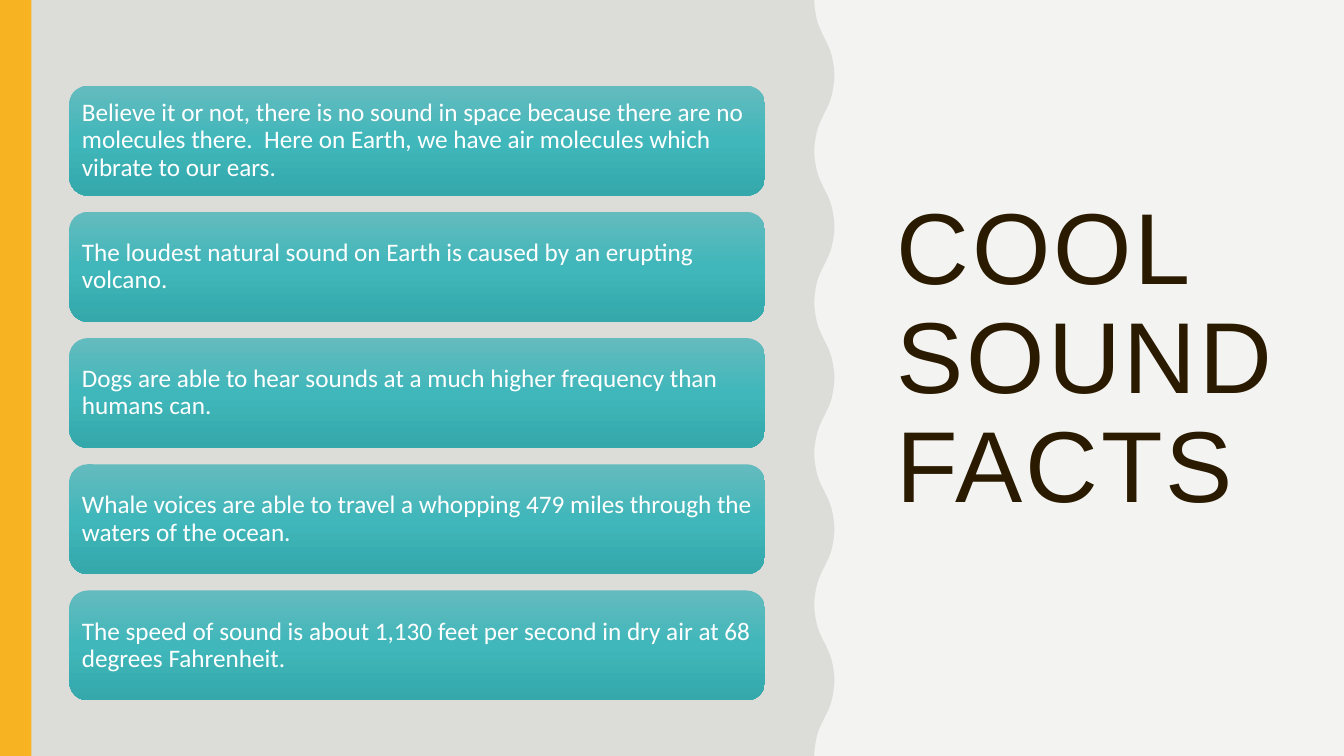
from copy import deepcopy

from pptx import Presentation
from pptx.dml.color import RGBColor
from pptx.enum.shapes import MSO_SHAPE as Shape
from pptx.enum.text import MSO_ANCHOR as Anchor, MSO_AUTO_SIZE as AutoSize, PP_ALIGN as Align
from pptx.oxml.ns import qn
from pptx.util import Cm, Pt

# Content
TITLE = "COOL SOUND FACTS"
FACTS = [
    "Believe it or not, there is no sound in space because there are no molecules there.  "
    "Here on Earth, we have air molecules which vibrate to our ears.",
    "The loudest natural sound on Earth is caused by an erupting volcano.",
    "Dogs are able to hear sounds at a much higher frequency than humans can.",
    "Whale voices are able to travel a whopping 479 miles through the waters of the ocean.",
    "The speed of sound is about 1,130 feet per second in dry air at 68 degrees Fahrenheit.",
]

# Colours
PAPER, PANEL, AMBER, BROWN, WHITE = "F3F3F2", "DCDCD9", "F8B323", "2A1A00", "FFFFFF"
CARD_STOPS = [(0, "64BBBE"), (0.5, "40B7BB"), (1, "34A8AB")]

# Measures in centimetres
PAGE_WIDTH, PAGE_HEIGHT = 33.87, 19.05
BAR_WIDTH = 0.79
WAVE_LEFT, WAVE_DEPTH, WAVE_COUNT = 20.52, 0.51, 5
CARD_LEFT, CARD_TOP, CARD_WIDTH, CARD_HEIGHT, CARD_GAP = 1.75, 2.16, 17.53, 2.77, 0.41

# First half of one wave: (share of half a wave down, share of the depth across)
WAVE_RISE = [(0, 0), (0.09, 0.02), (0.18, 0.07), (0.26, 0.13), (0.33, 0.21), (0.39, 0.3),
             (0.5, 0.5), (0.61, 0.7), (0.67, 0.79), (0.74, 0.87), (0.82, 0.93), (0.91, 0.98)]


def colour(code):
    return RGBColor.from_string(code)


def paint(shape, code):
    shape.shadow.inherit = False
    shape.line.fill.background()
    shape.fill.solid()
    shape.fill.fore_color.rgb = colour(code)


def paint_gradient(shape, stops):
    shape.shadow.inherit = False
    shape.line.fill.background()
    shape.fill.gradient()
    shape.fill.gradient_angle = 270
    stop_list = shape._element.spPr.find(qn("a:gradFill")).find(qn("a:gsLst"))
    while len(stop_list) < len(stops):
        stop_list.append(deepcopy(stop_list[0]))
    for stop, (position, code) in zip(shape.fill.gradient_stops, stops):
        stop.position = position
        stop.color.rgb = colour(code)


def write(frame, text, font, size, code):
    frame.word_wrap = True
    frame.auto_size = AutoSize.NONE
    frame.vertical_anchor = Anchor.MIDDLE
    para = frame.paragraphs[0]
    para.alignment = Align.LEFT
    para.line_spacing = 0.9
    span = para.add_run()
    span.text = text
    span.font.name = font
    span.font.size = Pt(size)
    span.font.color.rgb = colour(code)
    return span


def wave_points():
    half = PAGE_HEIGHT / WAVE_COUNT / 2
    for index in range(WAVE_COUNT * 2):
        for down, across in WAVE_RISE:
            depth = across if index % 2 == 0 else 1 - across
            yield Cm(WAVE_LEFT + depth * WAVE_DEPTH), Cm((index + down) * half)
    yield Cm(WAVE_LEFT), Cm(PAGE_HEIGHT)


# Page
deck = Presentation()
deck.slide_width, deck.slide_height = Cm(PAGE_WIDTH), Cm(PAGE_HEIGHT)
page = deck.slides.add_slide(deck.slide_layouts[5])
page.background.fill.solid()
page.background.fill.fore_color.rgb = colour(PAPER)

# Panel with the wavy edge
outline = page.shapes.build_freeform(0, 0)
outline.add_line_segments([*wave_points(), (0, Cm(PAGE_HEIGHT))], close=True)
paint(outline.convert_to_shape(), PANEL)

# Bar on the left
bar = page.shapes.add_shape(Shape.RECTANGLE, 0, 0, Cm(BAR_WIDTH), Cm(PAGE_HEIGHT))
paint(bar, AMBER)

# Title
title = page.shapes.title
title.left, title.top, title.width, title.height = Cm(22.35), Cm(1.35), Cm(10.16), Cm(15.47)
heading = write(title.text_frame, TITLE, "Arial", 72, BROWN)
heading.font._element.set("spc", "200")

# Fact cards
for row, fact in enumerate(FACTS):
    top = CARD_TOP + row * (CARD_HEIGHT + CARD_GAP)
    card = page.shapes.add_shape(Shape.ROUNDED_RECTANGLE, Cm(CARD_LEFT), Cm(top),
                                 Cm(CARD_WIDTH), Cm(CARD_HEIGHT))
    paint_gradient(card, CARD_STOPS)
    frame = card.text_frame
    frame.margin_left = frame.margin_right = frame.margin_top = frame.margin_bottom = Cm(0.18)
    write(frame, fact, "Calibri", 18, WHITE)

deck.save("out.pptx")
